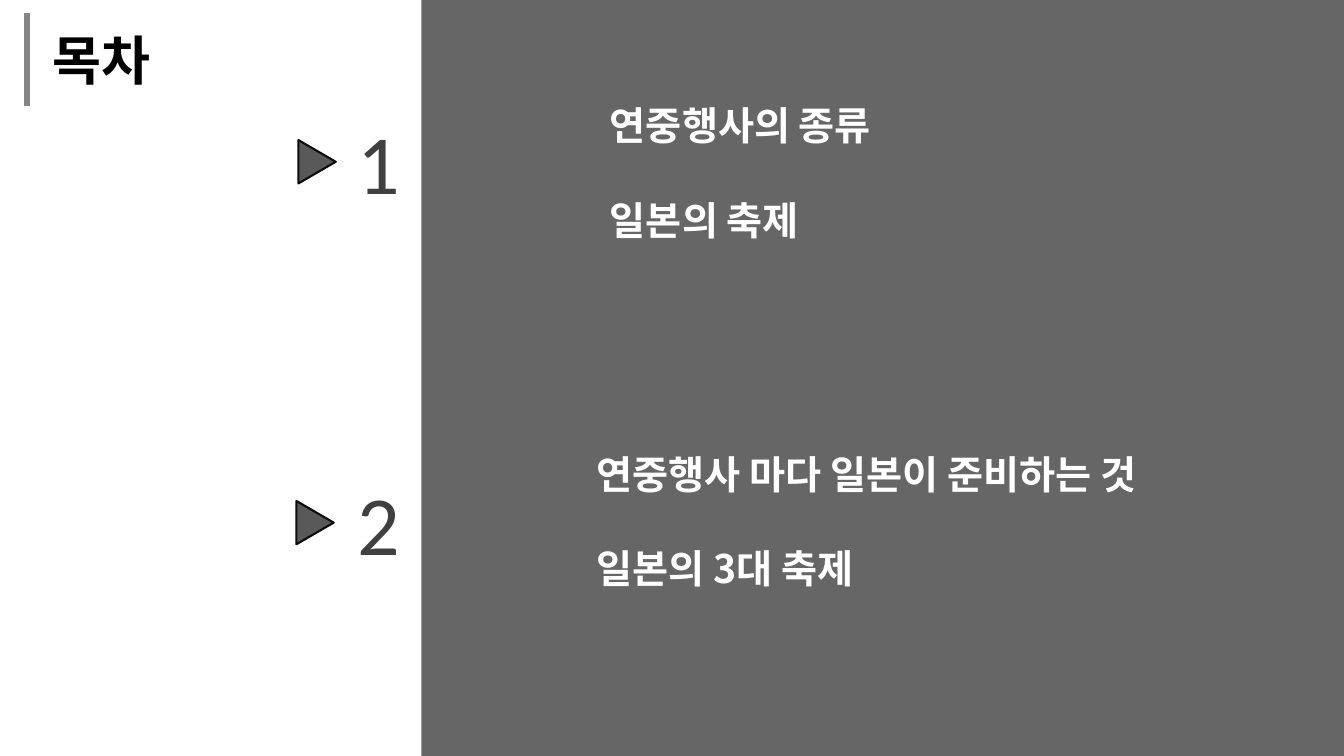
from dataclasses import dataclass

from lxml.etree import SubElement
from pptx import Presentation
from pptx.dml.color import RGBColor
from pptx.enum.shapes import MSO_CONNECTOR, MSO_SHAPE
from pptx.enum.text import MSO_ANCHOR, MSO_AUTO_SIZE, PP_ALIGN
from pptx.oxml.ns import qn
from pptx.util import Inches, Pt

TITLE = "목차"
# number, lines, marker left, list (left, top, width)
SECTIONS = [
    ("1", ["연중행사의 종류", "일본의 축제"], 2.93, (5.95, 0.96, 3.89)),
    ("2", ["연중행사 마다 일본이 준비하는 것", "일본의 3대 축제"], 2.91, (5.82, 4.42, 6.62)),
]

WIDTH, HEIGHT = 13.33, 7.5
PANEL_LEFT = 4.18
SECTION_PITCH = 3.58
NUMBER_LEFT, NUMBER_TOP = 3.45, 1.05
MARKER_TOP = 1.42
LIST_HEIGHT = 1.51


@dataclass(frozen=True)
class Theme:
    korean: str = "Noto Sans CJK KR"
    latin: str = "Calibri"
    title_size: int = 38
    list_size: int = 28
    number_size: int = 60
    leading: float = 1.2
    black: str = "000000"
    white: str = "FFFFFF"
    number: str = "404040"
    marker: str = "595959"
    marker_edge: str = "0D0D0D"
    accent: str = "858585"
    panel_alpha: int = 60


THEME = Theme()


def rgb(value):
    return RGBColor.from_string(value)


def place(shape, left, top, width, height):
    shape.left, shape.top = Inches(left), Inches(top)
    shape.width, shape.height = Inches(width), Inches(height)


def add_span(para, text, size, color, face, bold=False):
    span = para.add_run()
    span.text = text
    font = span.font
    font.size, font.bold, font.name = Pt(size), bold, face
    font.color.rgb = rgb(color)
    SubElement(span._r.get_or_add_rPr(), qn("a:ea"), typeface=face)


def fill_box(box, lines, size, color, face, bold=False, leading=None, wrap=True):
    """Write lines from the top left, one blank line's height apart."""
    frame = box.text_frame
    frame.word_wrap = wrap
    frame.auto_size = MSO_AUTO_SIZE.SHAPE_TO_FIT_TEXT
    frame.vertical_anchor = MSO_ANCHOR.TOP
    for index, line in enumerate(lines):
        para = frame.add_paragraph() if index else frame.paragraphs[0]
        properties = para._p.get_or_add_pPr()
        properties.set("marL", "0")
        properties.set("indent", "0")
        SubElement(properties, qn("a:buNone"))
        para.alignment = PP_ALIGN.LEFT
        para.space_before = Pt(size * THEME.leading if index else 0)
        if leading:
            para.line_spacing = Pt(size * leading)
        add_span(para, line, size, color, face, bold)


def add_panel(page):
    panel = page.shapes.add_shape(
        MSO_SHAPE.RECTANGLE, Inches(PANEL_LEFT), 0, Inches(WIDTH - PANEL_LEFT), Inches(HEIGHT))
    panel.shadow.inherit = False
    panel.line.fill.background()
    panel.fill.solid()
    panel.fill.fore_color.rgb = rgb(THEME.black)
    color = panel._element.spPr.find(qn("a:solidFill"))[0]
    SubElement(color, qn("a:alpha"), val=str(THEME.panel_alpha * 1000))
    page.shapes._spTree.insert(2, panel._element)  # behind the lists


def add_title_bar(page):
    bar = page.shapes.add_connector(
        MSO_CONNECTOR.STRAIGHT, Inches(0.27), Inches(0.13), Inches(0.27), Inches(1.05))
    bar.line.color.rgb = rgb(THEME.accent)
    bar.line.width = Pt(4.5)
    SubElement(bar._element.spPr, qn("a:effectLst"))


def add_marker(page, left, top):
    marker = page.shapes.add_shape(
        MSO_SHAPE.ISOSCELES_TRIANGLE, Inches(left), Inches(top), Inches(0.43), Inches(0.37))
    marker.rotation = 90
    marker.shadow.inherit = False
    marker.fill.solid()
    marker.fill.fore_color.rgb = rgb(THEME.marker)
    marker.line.color.rgb = rgb(THEME.marker_edge)
    marker.line.width = Pt(1.5)


def main():
    deck = Presentation()
    deck.slide_width, deck.slide_height = Inches(WIDTH), Inches(HEIGHT)
    page = deck.slides.add_slide(deck.slide_layouts[3])
    title, *lists = page.placeholders
    add_panel(page)
    add_title_bar(page)

    place(title, 0.42, 0.22, 2.54, 0.73)
    fill_box(title, [TITLE], THEME.title_size, THEME.black, THEME.korean, True, THEME.leading)

    for row, (body, section) in enumerate(zip(lists, SECTIONS)):
        number, lines, marker_left, (left, top, width) = section
        shift = row * SECTION_PITCH
        place(body, left, top, width, LIST_HEIGHT)
        fill_box(body, lines, THEME.list_size, THEME.white, THEME.korean, True, THEME.leading)
        add_marker(page, marker_left, MARKER_TOP + shift)
        box = page.shapes.add_textbox(
            Inches(NUMBER_LEFT), Inches(NUMBER_TOP + shift), Inches(0.63), Inches(1.11))
        fill_box(box, [number], THEME.number_size, THEME.number, THEME.latin, wrap=False)

    deck.save("out.pptx")


if __name__ == "__main__":
    main()
